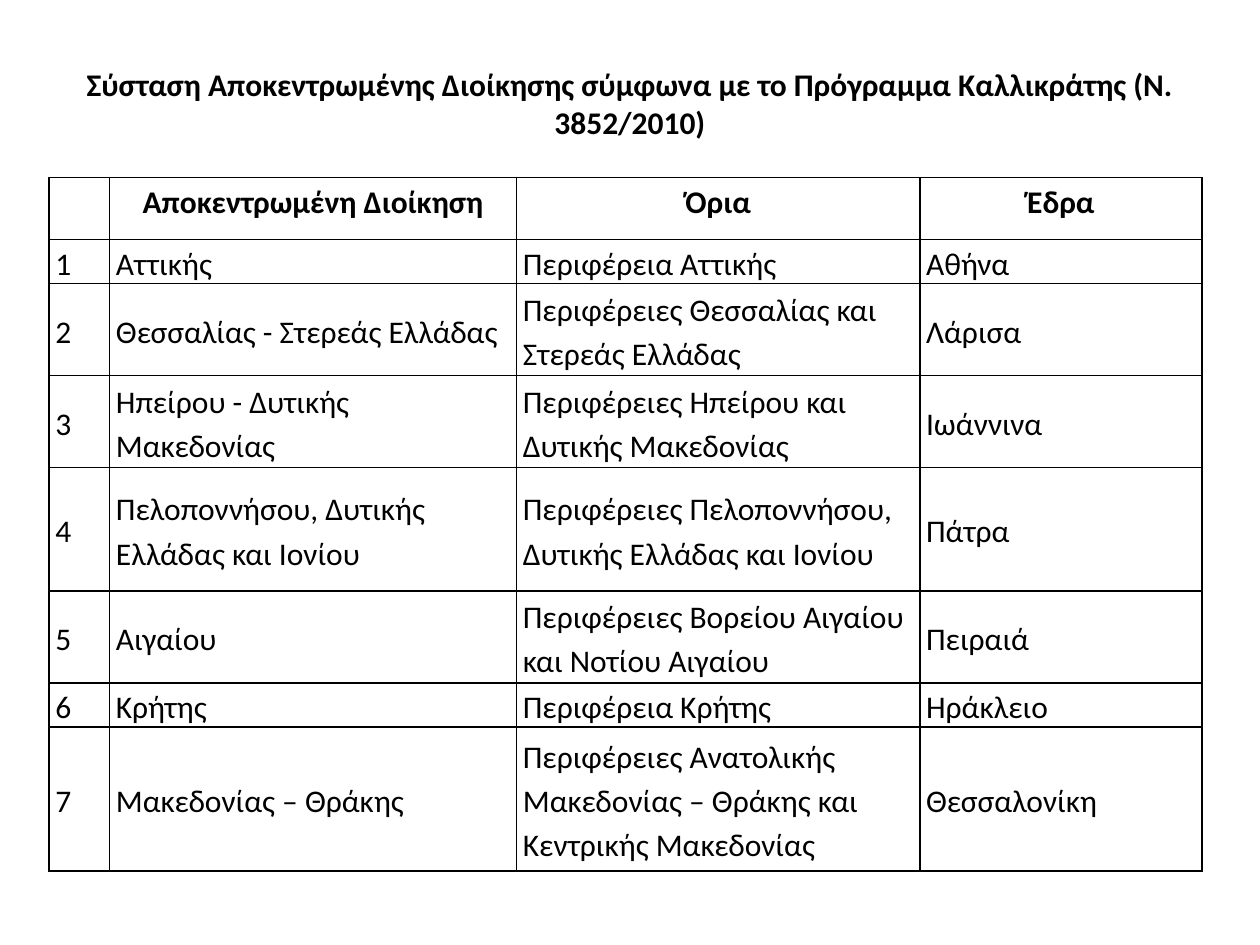
from lxml import etree
from pptx import Presentation
from pptx.dml.color import RGBColor
from pptx.enum.text import MSO_ANCHOR, MSO_AUTO_SIZE, PP_ALIGN
from pptx.oxml.ns import qn
from pptx.util import Inches, Pt

TOP, MIDDLE, BOTTOM = MSO_ANCHOR.TOP, MSO_ANCHOR.MIDDLE, MSO_ANCHOR.BOTTOM
LEFT, CENTER = PP_ALIGN.LEFT, PP_ALIGN.CENTER
FIXED = MSO_AUTO_SIZE.NONE
FONT, SIZE, INK = "Calibri", 18, "000000"

TITLE = "Σύσταση Αποκεντρωμένης Διοίκησης σύμφωνα με το Πρόγραμμα Καλλικράτης (Ν. 3852/2010)"
HEAD = ("", "Αποκεντρωμένη Διοίκηση", "Όρια", "Έδρα")
UNITS = [
    ("Αττικής", "Περιφέρεια Αττικής", "Αθήνα"),
    ("Θεσσαλίας - Στερεάς Ελλάδας", "Περιφέρειες Θεσσαλίας και Στερεάς Ελλάδας", "Λάρισα"),
    ("Ηπείρου - Δυτικής Μακεδονίας", "Περιφέρειες Ηπείρου και Δυτικής Μακεδονίας", "Ιωάννινα"),
    ("Πελοποννήσου, Δυτικής Ελλάδας και Ιονίου",
     "Περιφέρειες Πελοποννήσου, Δυτικής Ελλάδας και Ιονίου", "Πάτρα"),
    ("Αιγαίου", "Περιφέρειες Βορείου Αιγαίου και Νοτίου Αιγαίου", "Πειραιά"),
    ("Κρήτης", "Περιφέρεια Κρήτης", "Ηράκλειο"),
    ("Μακεδονίας – Θράκης",
     "Περιφέρειες Ανατολικής Μακεδονίας – Θράκης και Κεντρικής Μακεδονίας", "Θεσσαλονίκη"),
]
COLS = (0.48, 3.23, 3.2, 2.24)
ROWS = (0.49, 0.24, 0.73, 0.73, 0.98, 0.73, 0.24, 1.14)


def color(code):
    return RGBColor.from_string(code)


def style(frame, bold, align):
    para = frame.paragraphs[0]
    para.alignment = align
    for run in para.runs:
        font = run.font
        font.name, font.size, font.bold = FONT, Pt(SIZE), bold
        font.color.rgb = color(INK)
    return para


def border(cell):
    props = cell._tc.get_or_add_tcPr()
    for i, side in enumerate(("a:lnL", "a:lnR", "a:lnT", "a:lnB")):
        line = etree.Element(qn(side), w=str(Pt(1)))
        fill = etree.SubElement(line, qn("a:solidFill"))
        etree.SubElement(fill, qn("a:srgbClr"), val=INK)
        props.insert(i, line)  # borders come before the fill


def main():
    deck = Presentation()
    deck.slide_width, deck.slide_height = Inches(10), Inches(7.5)
    slide = deck.slides.add_slide(deck.slide_layouts[5])

    # Title
    title = slide.shapes.title
    title.left, title.top = Inches(0), Inches(0.35)
    title.width, title.height = deck.slide_width, Inches(0.82)
    frame = title.text_frame
    frame.text = TITLE
    frame.auto_size, frame.word_wrap = FIXED, True
    frame.vertical_anchor = BOTTOM
    style(frame, True, CENTER)

    # Table of administrations
    data = [HEAD] + [(str(n), *unit) for n, unit in enumerate(UNITS, 1)]
    table = slide.shapes.add_table(
        len(ROWS), len(COLS), Inches(0.39), Inches(1.41),
        Inches(sum(COLS)), Inches(sum(ROWS))).table
    table.first_row = table.horz_banding = False
    for col, width in zip(table.columns, COLS):
        col.width = Inches(width)
    for r, (row, height) in enumerate(zip(table.rows, ROWS)):
        row.height = Inches(height)
        head = r == 0
        for cell, text in zip(row.cells, data[r]):
            cell.text = text
            cell.fill.background()
            cell.margin_left = cell.margin_right = Inches(0.05)
            cell.margin_top = cell.margin_bottom = 0
            cell.vertical_anchor = TOP if head else MIDDLE
            para = style(cell.text_frame, head, CENTER if head else LEFT)
            para.line_spacing = 1.15
            border(cell)

    deck.save("out.pptx")


if __name__ == "__main__":
    main()
